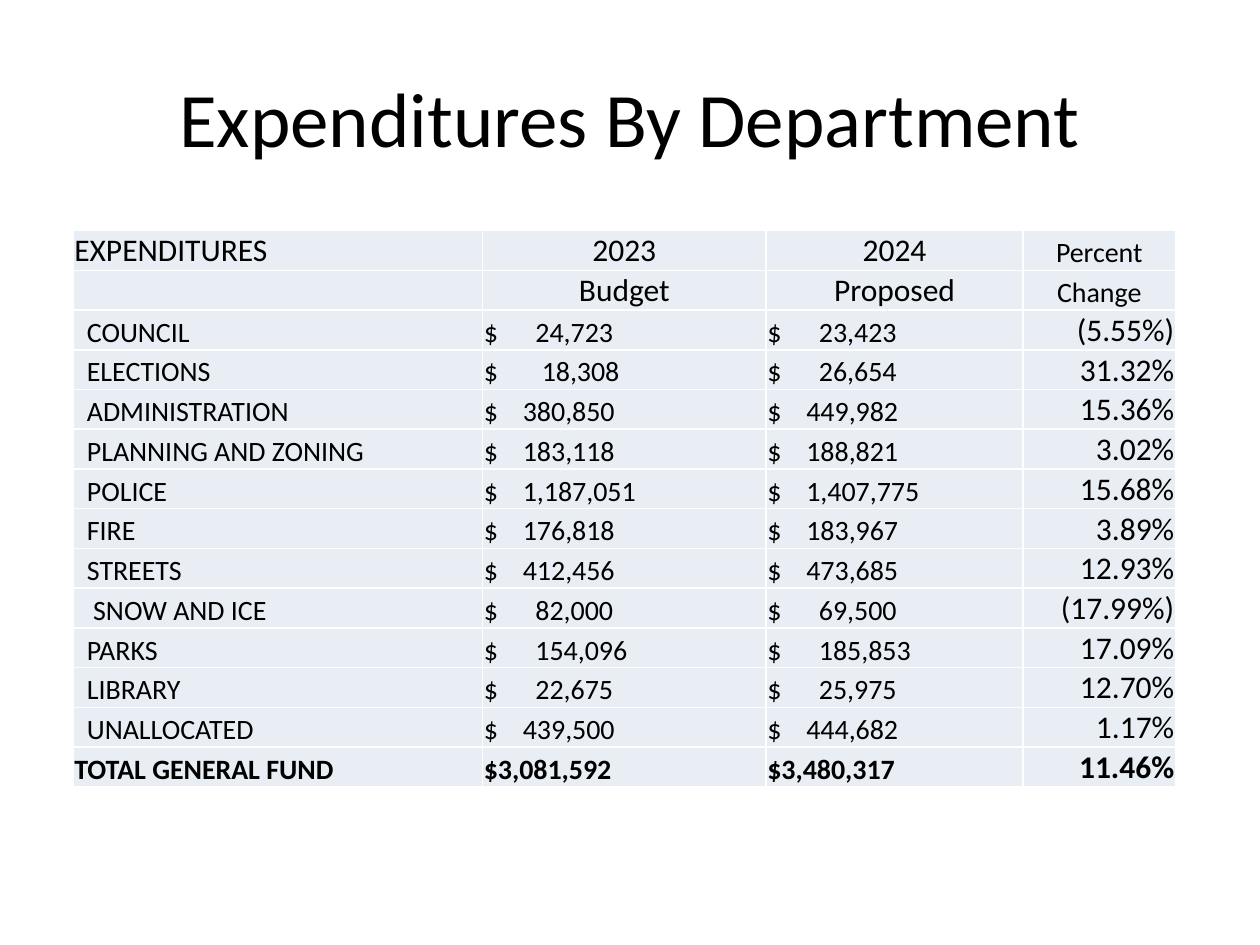
from lxml.etree import SubElement
from pptx import Presentation
from pptx.dml.color import RGBColor
from pptx.enum.text import MSO_ANCHOR, PP_ALIGN
from pptx.oxml.ns import qn
from pptx.util import Inches, Pt

COLORS = {"text": "000000", "cell": "E9EDF4", "border": "FFFFFF"}
FONT = "Calibri"
COLUMN_WIDTHS = [3.25, 2.25, 2.04, 1.21]
ROW_HEIGHT = 0.31
NEAR, MIDDLE, FAR = 0.31, 0.41, 0.46  # where an amount starts after its dollar sign

HEADERS = [
    ("EXPENDITURES", "2023", "2024", "Percent"),
    ("", "Budget", "Proposed", "Change"),
]
# label, label indent, budget, its tab, proposed, its tab, change
DEPARTMENTS = [
    ("COUNCIL", 0.1, "24,723", MIDDLE, "23,423", MIDDLE, "(5.55%)"),
    ("ELECTIONS", 0.1, "18,308", FAR, "26,654", MIDDLE, "31.32%"),
    ("ADMINISTRATION", 0.1, "380,850", NEAR, "449,982", NEAR, "15.36%"),
    ("PLANNING AND ZONING", 0.1, "183,118", NEAR, "188,821", NEAR, "3.02%"),
    ("POLICE", 0.1, "1,187,051", NEAR, "1,407,775", NEAR, "15.68%"),
    ("FIRE", 0.1, "176,818", NEAR, "183,967", NEAR, "3.89%"),
    ("STREETS", 0.1, "412,456", NEAR, "473,685", NEAR, "12.93%"),
    ("SNOW AND ICE", 0.15, "82,000", MIDDLE, "69,500", MIDDLE, "(17.99%)"),
    ("PARKS", 0.1, "154,096", MIDDLE, "185,853", MIDDLE, "17.09%"),
    ("LIBRARY", 0.1, "22,675", MIDDLE, "25,975", MIDDLE, "12.70%"),
    ("UNALLOCATED", 0.1, "439,500", NEAR, "444,682", NEAR, "1.17%"),
]
TOTAL = ("TOTAL GENERAL FUND", "$3,081,592", "$3,480,317", "11.46%")


def rgb(name):
    return RGBColor.from_string(COLORS[name])


def format_font(paragraph, size, bold=False):
    font = paragraph.font
    font.name, font.size, font.bold = FONT, Pt(size), bold
    font.color.rgb = rgb("text")


def add_title(slide, text):
    title = slide.shapes.title
    title.left, title.top = Inches(0.5), Inches(0.3)
    title.width, title.height = Inches(9), Inches(1.25)
    title.text_frame.text = text
    title.text_frame.vertical_anchor = MSO_ANCHOR.MIDDLE
    paragraph = title.text_frame.paragraphs[0]
    paragraph.alignment = PP_ALIGN.CENTER
    format_font(paragraph, 44)


def add_borders(cell):
    properties = cell._tc.get_or_add_tcPr()
    for side in ("lnL", "lnR", "lnT", "lnB"):
        line = SubElement(properties, qn(f"a:{side}"), w=str(Pt(1)))
        fill = SubElement(line, qn("a:solidFill"))
        SubElement(fill, qn("a:srgbClr"), val=COLORS["border"])


def add_tab_stop(paragraph, position):
    tabs = SubElement(paragraph._p.get_or_add_pPr(), qn("a:tabLst"))
    SubElement(tabs, qn("a:tab"), pos=str(Inches(position)), algn="l")


def fill_cell(cell, text, size=16, align=PP_ALIGN.LEFT, bold=False, indent=0, tab=None):
    cell.margin_left = Inches(0.01 + indent)
    cell.margin_right = cell.margin_top = Inches(0.01)
    cell.margin_bottom = 0
    cell.vertical_anchor = MSO_ANCHOR.BOTTOM
    add_borders(cell)
    cell.fill.solid()
    cell.fill.fore_color.rgb = rgb("cell")
    cell.text = text
    paragraph = cell.text_frame.paragraphs[0]
    paragraph.alignment = align
    if tab:
        add_tab_stop(paragraph, tab)
    format_font(paragraph, size, bold)


def fill_header(cells, texts):
    label, budget, proposed, change = texts
    fill_cell(cells[0], label, 18)
    fill_cell(cells[1], budget, 18, PP_ALIGN.CENTER)
    fill_cell(cells[2], proposed, 18, PP_ALIGN.CENTER)
    fill_cell(cells[3], change, 16, PP_ALIGN.CENTER)


def fill_department(cells, department):
    label, indent, budget, budget_tab, proposed, proposed_tab, change = department
    fill_cell(cells[0], label, indent=indent)
    fill_cell(cells[1], f"$\t{budget}", tab=budget_tab)
    fill_cell(cells[2], f"$\t{proposed}", tab=proposed_tab)
    fill_cell(cells[3], change, 18, PP_ALIGN.RIGHT)


def fill_total(cells, texts):
    for cell, text in zip(cells, texts[:3]):
        fill_cell(cell, text, bold=True)
    fill_cell(cells[3], texts[3], 18, PP_ALIGN.RIGHT, bold=True)


def add_expenditure_table(slide):
    row_count = len(HEADERS) + len(DEPARTMENTS) + 1
    table = slide.shapes.add_table(
        row_count, len(COLUMN_WIDTHS), Inches(0.58), Inches(1.83),
        Inches(sum(COLUMN_WIDTHS)), Inches(ROW_HEIGHT * row_count),
    ).table
    table.first_row = table.horz_banding = False
    for column, width in zip(table.columns, COLUMN_WIDTHS):
        column.width = Inches(width)
    for row in table.rows:
        row.height = Inches(ROW_HEIGHT)

    rows = [list(row.cells) for row in table.rows]
    for cells, texts in zip(rows, HEADERS):
        fill_header(cells, texts)
    for cells, department in zip(rows[len(HEADERS):], DEPARTMENTS):
        fill_department(cells, department)
    fill_total(rows[-1], TOTAL)


def main():
    presentation = Presentation()
    presentation.slide_width, presentation.slide_height = Inches(10), Inches(7.5)
    slide = presentation.slides.add_slide(presentation.slide_layouts[5])
    add_title(slide, "Expenditures By Department")
    add_expenditure_table(slide)
    presentation.save("out.pptx")


if __name__ == "__main__":
    main()
